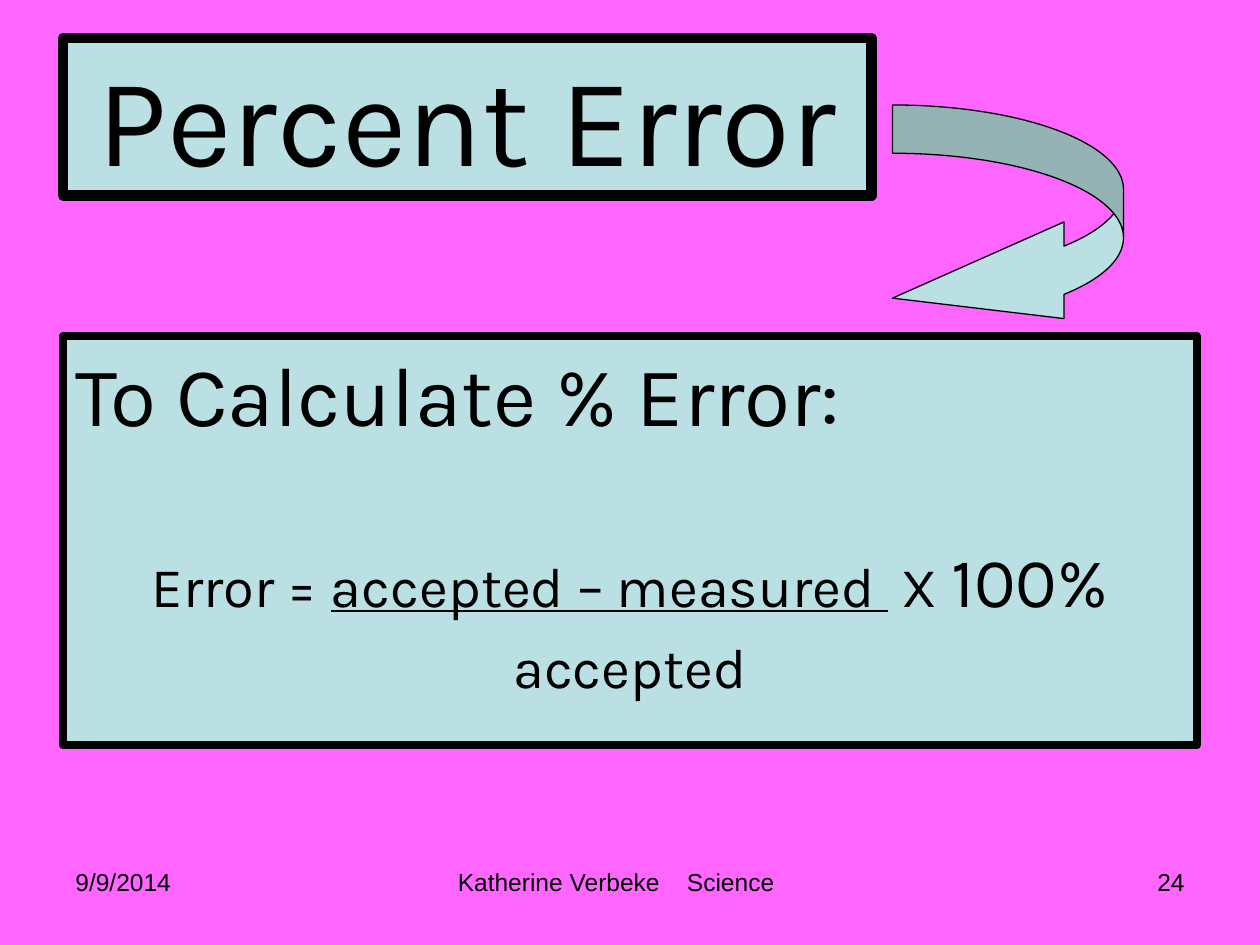
"""Build the Percent Error slide with its formula panel, arrow and footer."""
import pptx
import pptx.dml.color
import pptx.enum.shapes
import pptx.enum.text
import pptx.util

Pt = pptx.util.Pt
RGBColor = pptx.dml.color.RGBColor
ALIGN = pptx.enum.text.PP_ALIGN
ANCHOR = pptx.enum.text.MSO_ANCHOR
SHAPE = pptx.enum.shapes.MSO_SHAPE

PINK = RGBColor(0xFF, 0x66, 0xFF)
PALE_BLUE = RGBColor(0xBB, 0xE0, 0xE3)
BLACK = RGBColor(0, 0, 0)

TITLE = "Percent Error"
FORMULA = [
    (ALIGN.LEFT, 9.6, [("To Calculate % Error:", 48, False)]),
    (ALIGN.CENTER, 54, [
        ("Error = ", 32, False),
        ("accepted – measured ", 32, True),
        (" X ", 32, False),
        ("100%", 40, False),
    ]),
    (ALIGN.CENTER, 6.4, [("accepted", 32, False)]),
]
FOOTERS = [
    ("9/9/2014", 36, 168, ALIGN.LEFT, 7.2),
    ("Katherine Verbeke    Science", 246, 228, ALIGN.CENTER, 22.8),
    ("24", 516, 168, ALIGN.RIGHT, 7.2),
]
TITLE_BOX = (36, 21.6, 462, 90)
PANEL_BOX = (36, 192, 648, 234)
ARROW_BOX = (510, 60, 132, 138)
ARROW_ADJUSTMENTS = (0.209, 0.418, 0.742)
FOOTER_TOP, FOOTER_HEIGHT = 492, 37.5


def style_shape(shape, line_width):
    shape.fill.solid()
    shape.fill.fore_color.rgb = PALE_BLUE
    shape.line.color.rgb = BLACK
    shape.line.width = Pt(line_width)


def style_run(run, font_name, size, underline=False):
    run.font.name = font_name
    run.font.size = Pt(size)
    run.font.color.rgb = BLACK
    if underline:
        run.font.underline = True


def add_shape(slide, kind, box, line_width):
    shape = slide.shapes.add_shape(kind, *map(Pt, box))
    shape.shadow.inherit = False
    style_shape(shape, line_width)
    return shape


def add_footer(slide, text, left, width, alignment, right_margin):
    box = slide.shapes.add_textbox(Pt(left), Pt(FOOTER_TOP), Pt(width), Pt(FOOTER_HEIGHT))
    box.text_frame.word_wrap = True
    box.text_frame.margin_right = Pt(right_margin)
    box.text_frame.text = text
    paragraph = box.text_frame.paragraphs[0]
    paragraph.alignment = alignment
    style_run(paragraph.runs[0], "Arial", 14)


def set_title(slide):
    title = slide.shapes.title
    title.left, title.top, title.width, title.height = map(Pt, TITLE_BOX)
    style_shape(title, 6)
    title.text_frame.text = TITLE
    title.text_frame.vertical_anchor = ANCHOR.MIDDLE
    title.text_frame.auto_size = pptx.enum.text.MSO_AUTO_SIZE.NONE
    paragraph = title.text_frame.paragraphs[0]
    paragraph.alignment = ALIGN.CENTER
    style_run(paragraph.runs[0], "Karla", 72)


def add_formula_panel(slide):
    panel = add_shape(slide, SHAPE.RECTANGLE, PANEL_BOX, 4.5)
    frame = panel.text_frame
    frame.word_wrap = True
    frame.vertical_anchor = ANCHOR.TOP
    for index, (alignment, space_before, parts) in enumerate(FORMULA):
        paragraph = frame.add_paragraph() if index else frame.paragraphs[0]
        paragraph.alignment = alignment
        paragraph.space_before = Pt(space_before)
        for text, size, underline in parts:
            run = paragraph.add_run()
            run.text = text
            style_run(run, "Karla", size, underline)


def main():
    presentation = pptx.Presentation()
    presentation.slide_width, presentation.slide_height = Pt(720), Pt(540)
    slide = presentation.slides.add_slide(presentation.slide_layouts[5])
    slide.background.fill.solid()
    slide.background.fill.fore_color.rgb = PINK
    for footer in FOOTERS:
        add_footer(slide, *footer)
    set_title(slide)
    add_formula_panel(slide)
    arrow = add_shape(slide, SHAPE.CURVED_LEFT_ARROW, ARROW_BOX, 0.75)
    for index, value in enumerate(ARROW_ADJUSTMENTS):
        arrow.adjustments[index] = value
    presentation.save("out.pptx")


if __name__ == "__main__":
    main()
